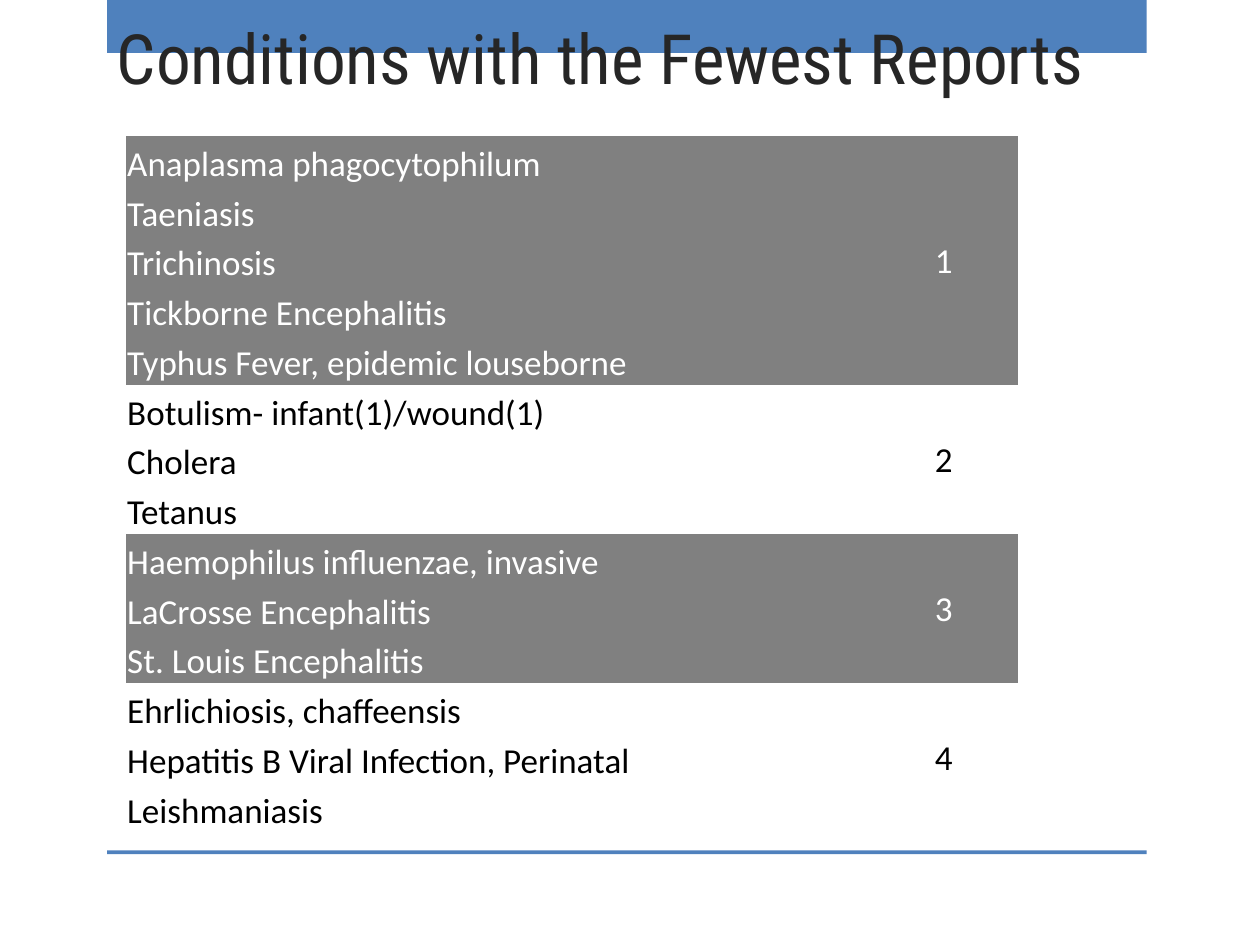
from pptx import Presentation
from pptx.dml.color import RGBColor
from pptx.enum.shapes import MSO_SHAPE
from pptx.enum.text import MSO_ANCHOR, PP_ALIGN
from pptx.util import Inches, Pt

BLUE = RGBColor(0x4F, 0x81, 0xBD)
GRAY = RGBColor(0x80, 0x80, 0x80)
DARK = RGBColor(0x26, 0x26, 0x26)
WHITE = RGBColor(0xFF, 0xFF, 0xFF)
BLACK = RGBColor(0, 0, 0)
NO_STYLE_NO_GRID = "{2D5ABB26-0587-4C30-8999-92F81FD0307C}"

TITLE = "Conditions with the Fewest Reports"
# Number of reports, then each condition with the columns its name spans
GROUPS = [
    ("1", [("Anaplasma phagocytophilum", 3), ("Taeniasis", 1), ("Trichinosis", 2),
           ("Tickborne Encephalitis", 3), ("Typhus Fever, epidemic louseborne", 4)]),
    ("2", [("Botulism- infant(1)/wound(1)", 3), ("Cholera", 1), ("Tetanus", 1)]),
    ("3", [("Haemophilus influenzae, invasive", 4), ("LaCrosse Encephalitis", 3),
           ("St. Louis Encephalitis", 3)]),
    ("4", [("Ehrlichiosis, chaffeensis", 3),
           ("Hepatitis B Viral Infection, Perinatal", 4), ("Leishmaniasis", 2)]),
]
BARS = [(0, 0.42), (6.75, 0.03)]  # top, height
COLS = 6
ROWS = sum(len(names) for _, names in GROUPS)


def style_run(p, font, size, color):
    f = p.runs[0].font
    f.name, f.size = font, Pt(size)
    f.color.rgb = color


def fill_cell(cell, text, color, anchor, align):
    cell.text = text
    cell.vertical_anchor = anchor
    p = cell.text_frame.paragraphs[0]
    p.alignment = align
    style_run(p, "Calibri", 20, color)


prs = Presentation()
prs.slide_width, prs.slide_height = Inches(10), Inches(7.5)
s = prs.slides.add_slide(prs.slide_layouts[6])

# Blue bars at top and bottom
for top, height in BARS:
    bar = s.shapes.add_shape(MSO_SHAPE.RECTANGLE, Inches(0.85), Inches(top),
                             Inches(8.25), Inches(height))
    bar.shadow.inherit = False
    bar.fill.solid()
    bar.fill.fore_color.rgb = BLUE
    bar.line.fill.background()

# Title
tf = s.shapes.add_textbox(Inches(0.83), Inches(0.08), Inches(8.33), Inches(0.75)).text_frame
tf.word_wrap = True
tf.vertical_anchor = MSO_ANCHOR.BOTTOM
tf.text = TITLE
style_run(tf.paragraphs[0], "Roboto Condensed", 39.6, DARK)

# Table without grid lines
table = s.shapes.add_table(ROWS, COLS, Inches(1), Inches(1.08),
                           Inches(7.08), Inches(5.53)).table
table.first_row = table.horz_banding = False
table._tbl.tblPr.find("{*}tableStyleId").text = NO_STYLE_NO_GRID
for cell in table.iter_cells():
    cell.margin_left = cell.margin_right = cell.margin_top = Inches(0.01)
    cell.margin_bottom = 0

# Groups alternate between gray and clear
row = 0
for i, (count, names) in enumerate(GROUPS):
    shaded = i % 2 == 0
    color = WHITE if shaded else BLACK
    last = row + len(names) - 1
    for r, (name, span) in enumerate(names, row):
        for c in range(COLS):
            fill = table.cell(r, c).fill
            if shaded:
                fill.solid()
                fill.fore_color.rgb = GRAY
            else:
                fill.background()
        if span > 1:
            table.cell(r, 0).merge(table.cell(r, span - 1))
        fill_cell(table.cell(r, 0), name, color, MSO_ANCHOR.BOTTOM, PP_ALIGN.LEFT)
    table.cell(row, COLS - 1).merge(table.cell(last, COLS - 1))
    fill_cell(table.cell(row, COLS - 1), count, color, MSO_ANCHOR.MIDDLE, PP_ALIGN.CENTER)
    row = last + 1

prs.save("out.pptx")
